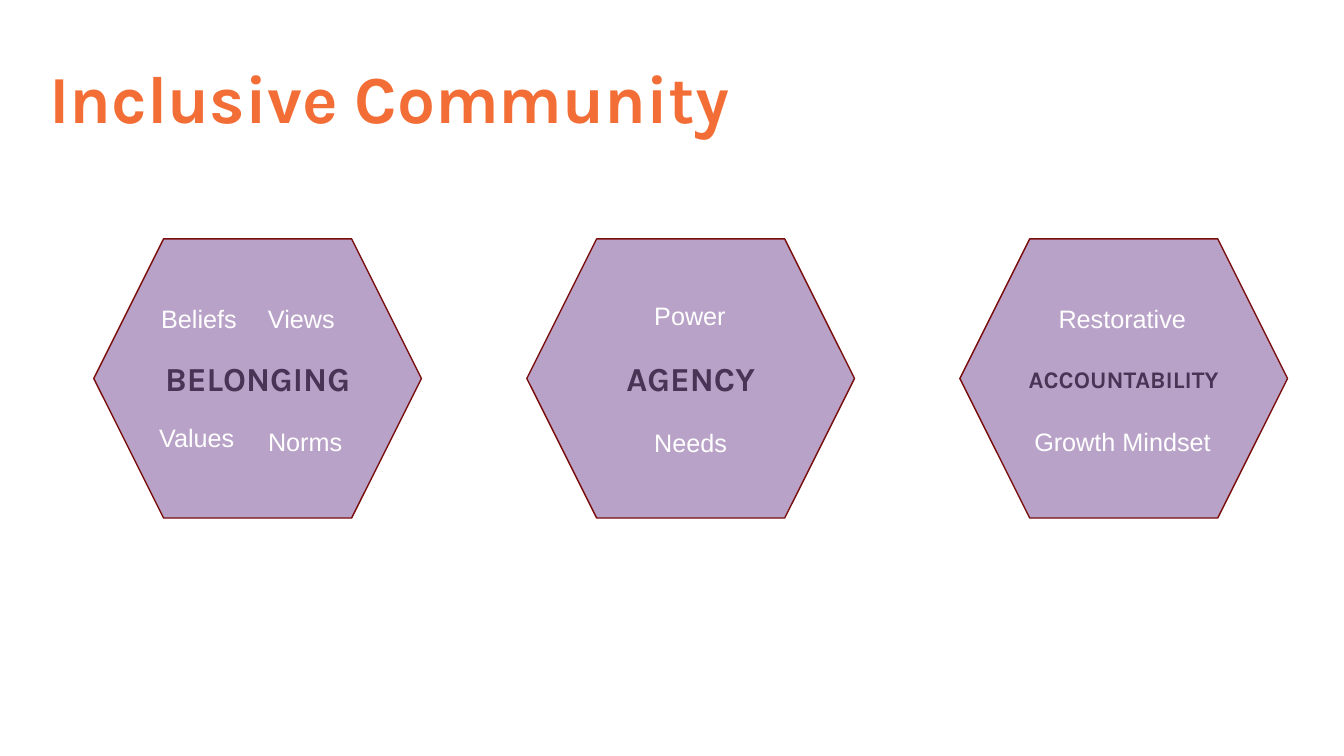
"""Build the Inclusive Community slide with its three hexagon themes."""
from dataclasses import dataclass

import pptx
import pptx.dml.color
import pptx.enum.shapes
import pptx.enum.text
import pptx.util

Inches = pptx.util.Inches
Align = pptx.enum.text.PP_ALIGN
Anchor = pptx.enum.text.MSO_ANCHOR


@dataclass(frozen=True)
class Theme:
    head: str = "Karla"
    body: str = "Arial"
    orange: str = "F36E36"
    lilac: str = "B9A2C7"
    maroon: str = "790E0D"
    plum: str = "493456"
    white: str = "FFFFFF"
    title: int = 48
    theme: int = 24
    small: int = 17
    word: int = 18


THEME = Theme()

HEXES = [
    ("BELONGING", THEME.theme),
    ("AGENCY", THEME.theme),
    ("ACCOUNTABILITY", THEME.small),
]
WORDS = [
    ("Values", 1.48, 4.14, 0.95),
    ("Beliefs", 1.5, 2.96, 1.03),
    ("Views", 2.56, 2.96, 0.87),
    ("Norms", 2.56, 4.18, 0.95),
    ("Needs", 6.39, 4.19, 0.93),
    ("Power", 6.39, 2.93, 0.92),
    ("Restorative", 10.4, 2.96, 1.48),
    ("Growth Mindset", 10.16, 4.18, 1.97),
]


def color(code):
    return pptx.dml.color.RGBColor.from_string(code)


def write(frame, text, font, size, code, bold=False, align=Align.LEFT):
    para = frame.paragraphs[0]
    para.alignment = align
    run = para.add_run()
    run.text = text
    run.font.name = font
    run.font.size = pptx.util.Pt(size)
    run.font.bold = bold
    run.font.color.rgb = color(code)
    return para


def add_title(slide, text):
    box = slide.shapes.add_textbox(Inches(0.39), Inches(0.27), Inches(7.58), Inches(1.48))
    frame = box.text_frame
    frame.word_wrap = True
    frame.vertical_anchor = Anchor.MIDDLE
    para = write(frame, text, THEME.head, THEME.title, THEME.orange, bold=True)
    para.line_spacing = 0.9


def add_hex(slide, text, size, left):
    kind = pptx.enum.shapes.MSO_SHAPE.HEXAGON
    shape = slide.shapes.add_shape(kind, Inches(left), Inches(2.37), Inches(3.25), Inches(2.77))
    shape.shadow.inherit = False
    shape.fill.solid()
    shape.fill.fore_color.rgb = color(THEME.lilac)
    shape.line.color.rgb = color(THEME.maroon)
    shape.line.width = pptx.util.Pt(1)
    frame = shape.text_frame
    frame.vertical_anchor = Anchor.MIDDLE
    write(frame, text, THEME.head, size, THEME.plum, bold=True, align=Align.CENTER)


def add_word(slide, text, left, top, width):
    box = slide.shapes.add_textbox(Inches(left), Inches(top), Inches(width), Inches(0.4))
    frame = box.text_frame
    frame.word_wrap = False
    frame.auto_size = pptx.enum.text.MSO_AUTO_SIZE.SHAPE_TO_FIT_TEXT
    write(frame, text, THEME.body, THEME.word, THEME.white)


def main():
    deck = pptx.Presentation()
    deck.slide_width = Inches(13.33)
    deck.slide_height = Inches(7.5)
    slide = deck.slides.add_slide(deck.slide_layouts[6])
    add_title(slide, "Inclusive Community")
    for index, (text, size) in enumerate(HEXES):
        add_hex(slide, text, size, 0.93 + 4.295 * index)
    for word in WORDS:
        add_word(slide, *word)
    deck.save("out.pptx")


if __name__ == "__main__":
    main()
